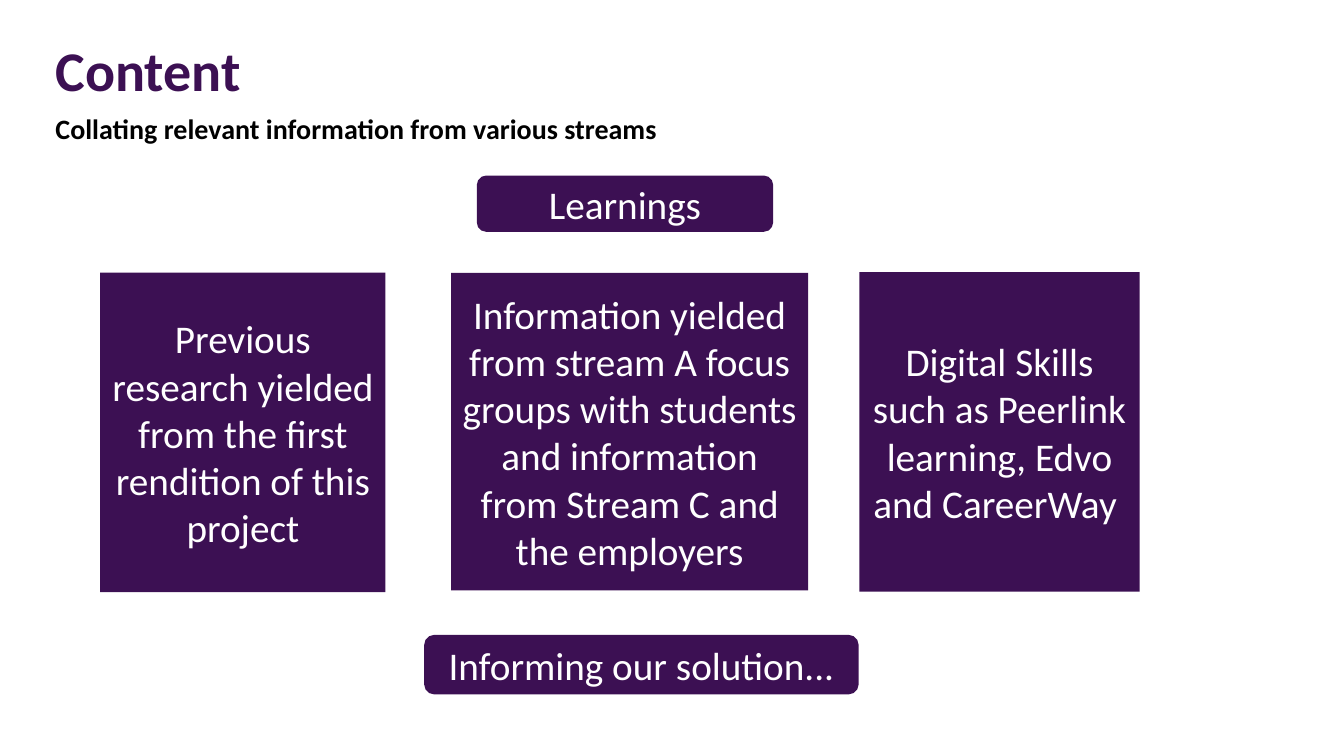
from pptx import Presentation
from pptx.dml.color import RGBColor
from pptx.enum import shapes, text
from pptx.util import Pt

PURPLE, WHITE, BLACK = "3C1053", "FFFFFF", "000000"
FONT = "Calibri"


def colour(value):
    return RGBColor.from_string(value)


def add_span(para, words, size, tint, bold=False):
    span = para.add_run()
    span.text = words
    span.font.name = FONT
    span.font.size = Pt(size)
    span.font.bold = bold
    span.font.color.rgb = colour(tint)


def place(shape, box):
    shape.left, shape.top, shape.width, shape.height = map(Pt, box)


def fill_heading(holder, box, words, size, tint, anchor, spacing, after):
    """Move a placeholder into its box and give it one bold line."""
    place(holder, box)
    frame = holder.text_frame
    frame.word_wrap = True
    frame.auto_size = text.MSO_AUTO_SIZE.NONE
    frame.vertical_anchor = anchor
    para = frame.paragraphs[0]
    props = para._p.get_or_add_pPr()
    props.set("marL", "0")
    props.set("indent", "0")
    props.insert(0, props.makeelement(
        "{http://schemas.openxmlformats.org/drawingml/2006/main}buNone", {}))
    para.alignment = text.PP_ALIGN.LEFT
    para.line_spacing = spacing
    para.space_before = Pt(0)
    para.space_after = Pt(after)
    add_span(para, words, size, tint, bold=True)


def add_header(page, box):
    """Title with the subtitle line beneath it."""
    left, top, width, height = box
    title, subtitle = page.placeholders
    fill_heading(title, (left, top, 618, 40.3), "Content", 40, PURPLE,
                 text.MSO_ANCHOR.BOTTOM, 0.9, 0)
    fill_heading(subtitle, (left, top + 38.9, width, height - 38.9),
                 "Collating relevant information from various streams", 20, BLACK,
                 text.MSO_ANCHOR.TOP, 1.0, 8)


def add_panel(page, kind, box, words):
    """Purple block with centred white text."""
    panel = page.shapes.add_shape(kind, *map(Pt, box))
    panel.shadow.inherit = False
    panel.fill.solid()
    panel.fill.fore_color.rgb = colour(PURPLE)
    panel.line.fill.background()
    frame = panel.text_frame
    frame.word_wrap = True
    frame.vertical_anchor = text.MSO_ANCHOR.MIDDLE
    para = frame.paragraphs[0]
    para.alignment = text.PP_ALIGN.CENTER
    para.space_after = Pt(6)
    add_span(para, words, 28, WHITE)


def add_streams(page, box):
    """Three source panels: offset, width and height of each within the box."""
    left, top, _, height = box
    streams = [
        (0, 0.4, 203.8, height,
         "Previous research yielded from the first rendition of this project"),
        (250.6, 0.6, 255, height - 1.4,
         "Information yielded from stream A focus groups with students and "
         "information from Stream C and the employers"),
        (542.2, 0, 200.2, height,
         "Digital Skills such as Peerlink learning, Edvo and CareerWay "),
    ]
    for across, down, width, tall, words in streams:
        add_panel(page, shapes.MSO_SHAPE.RECTANGLE,
                  (left + across, top + down, width, tall), words)


def main():
    deck = Presentation()
    deck.slide_width, deck.slide_height = Pt(960), Pt(540)
    page = deck.slides.add_slide(deck.slide_layouts[1])

    # Heading
    add_header(page, (32.4, 37.4, 782, 77.1))

    # Learnings, their sources and the outcome
    rounded = shapes.MSO_SHAPE.ROUNDED_RECTANGLE
    add_panel(page, rounded, (340.6, 125.4, 211.7, 40.2), "Learnings")
    add_streams(page, (71.6, 194.4, 743, 228.2))
    add_panel(page, rounded, (303, 453.5, 310.3, 42.5), "Informing our solution...")

    deck.save("out.pptx")


if __name__ == "__main__":
    main()
